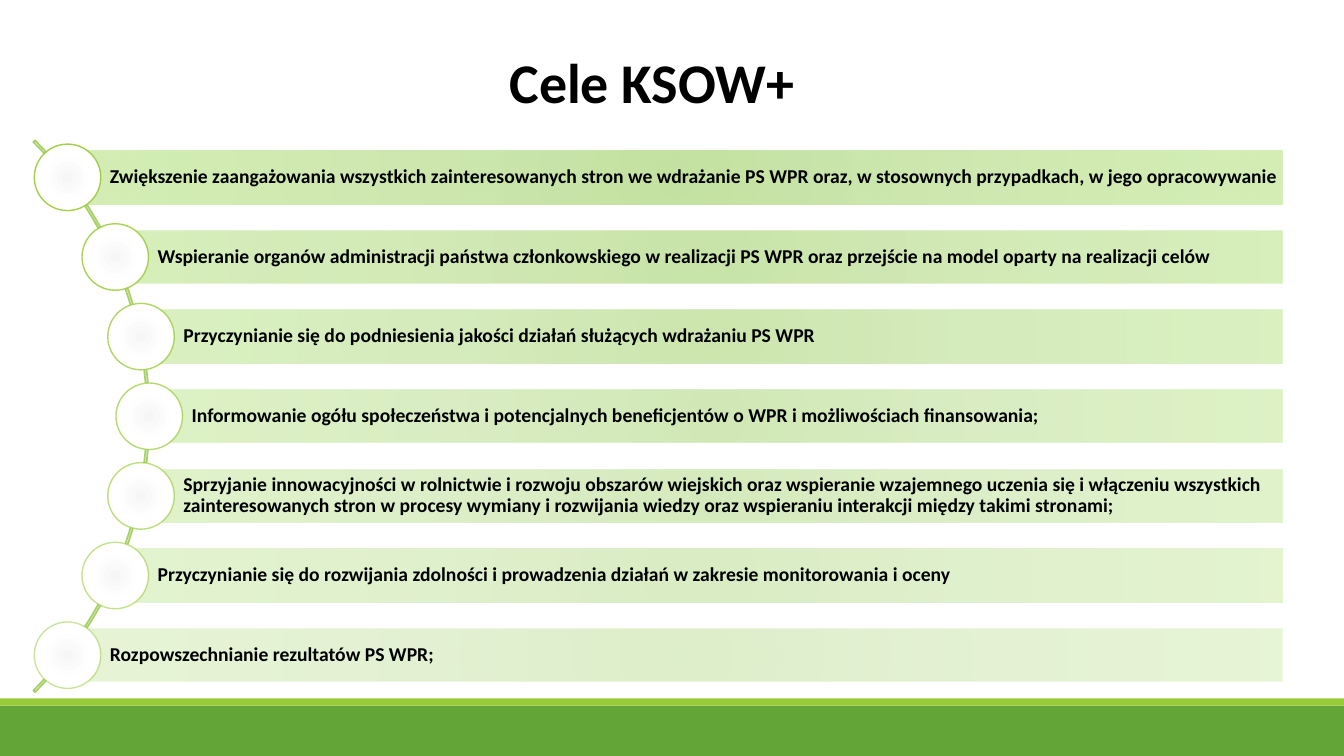
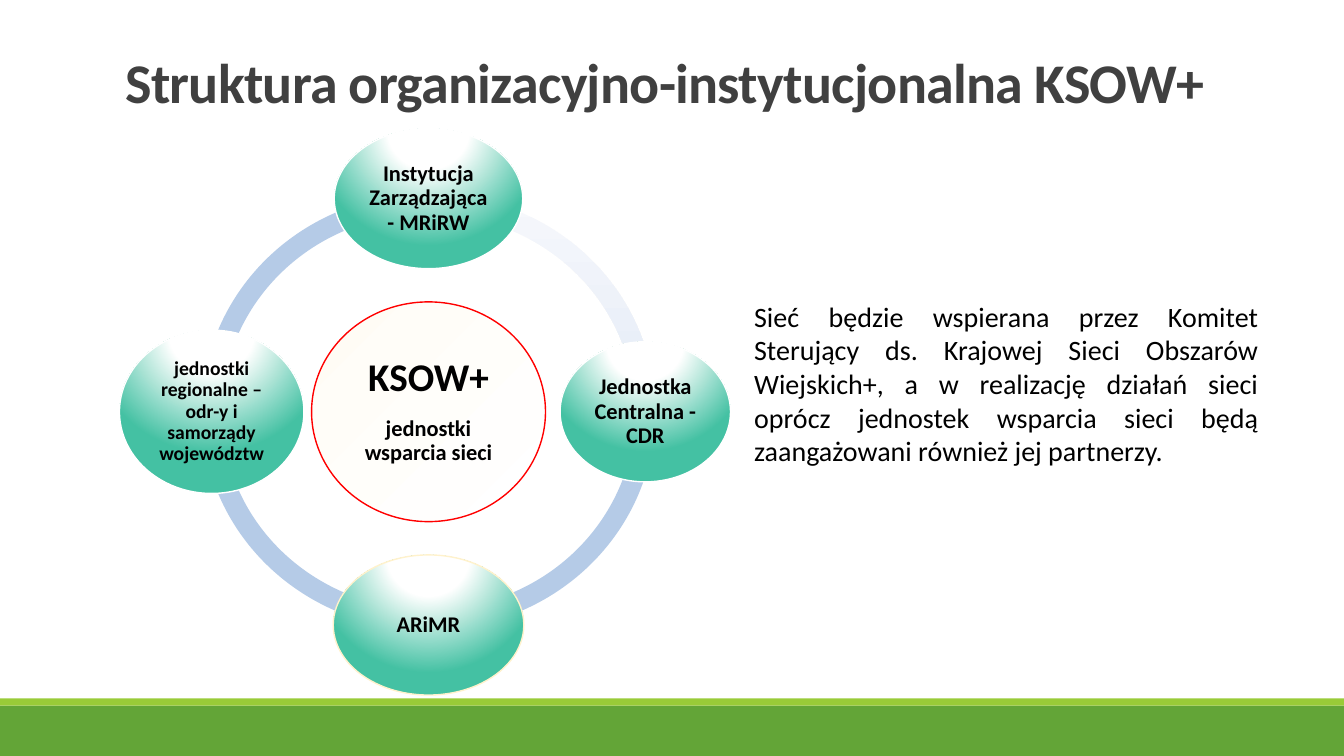
from collections import namedtuple
from dataclasses import dataclass
from math import sqrt

from lxml import etree
from pptx import Presentation
from pptx import util as u
from pptx.dml.color import RGBColor
from pptx.enum import shapes, text
from pptx.oxml.ns import qn

Box = namedtuple("Box", "x y w h")
SHAPE, ALIGN, ANCHOR = shapes.MSO_SHAPE, text.PP_ALIGN, text.MSO_ANCHOR


@dataclass(frozen=True)
class Theme:
    """Colours, type sizes and gradients of the deck."""

    font: str = "Calibri"
    ink: str = "000000"
    grey: str = "404040"
    white: str = "FFFFFF"
    green: str = "63A537"
    lime: str = "99CB38"
    arc: str = "A7D168"
    ring: str = "B5CBE7"
    red: str = "FF0000"
    cream: str = "FFF2CC"
    title: int = 40
    hub: int = 28
    body: int = 20
    node: int = 16
    small: int = 14
    band_fill: tuple = ((0, "BEDF97"), (45, "CAE6A9"), (100, "D0EDAE"))
    dot_fill: tuple = ((0, "F6F6F6"), (45, "FEFEFE"), (100, "FFFFFF"))
    node_fill: tuple = ((0, "FFFFFF"), (35, "FFFFFF"), (100, "44C1A3"))
    hub_fill: tuple = ((0, "FFFCF5"), (100, "FFFFFF"))
    fade_fill: tuple = ((0, "F6F8FC"), (100, "D0DCF0"))


T = Theme()
WIDTH, HEIGHT = 13.33, 7.5

GOALS = (
    "Zwiększenie zaangażowania wszystkich zainteresowanych stron we wdrażanie PS WPR oraz, "
    "w stosownych przypadkach, w jego opracowywanie",
    "Wspieranie organów administracji państwa członkowskiego w realizacji PS WPR oraz "
    "przejście na model oparty na realizacji celów",
    "Przyczynianie się do podniesienia jakości działań służących wdrażaniu PS WPR",
    "Informowanie ogółu społeczeństwa i potencjalnych beneficjentów o WPR "
    "i możliwościach finansowania;",
    "Sprzyjanie innowacyjności w rolnictwie i rozwoju obszarów wiejskich oraz wspieranie "
    "wzajemnego uczenia się i włączeniu wszystkich zainteresowanych stron w procesy wymiany "
    "i rozwijania wiedzy oraz wspieraniu interakcji między takimi stronami;",
    "Przyczynianie się do rozwijania zdolności i prowadzenia działań w zakresie "
    "monitorowania i oceny",
    "Rozpowszechnianie rezultatów PS WPR;",
)

NODES = (
    ("Instytucja Zarządzająca - MRiRW", 0, -1, 1.87, 1.39, T.white, T.node),
    ("Jednostka Centralna - CDR", 1, 0, 1.69, 1.39, T.white, T.node),
    ("ARiMR", 0, 1, 1.89, 1.39, T.cream, T.node),
    ("jednostki regionalne – odr-y i samorządy województw", -1, 0, 1.83, 1.62, T.white, T.small),
)

SUPPORT = (
    "Sieć będzie wspierana przez Komitet Sterujący ds. Krajowej Sieci Obszarów Wiejskich+, "
    "a w realizację działań sieci oprócz jednostek wsparcia sieci będą zaangażowani również "
    "jej partnerzy."
)


def inches(box):
    """Turn a box into lengths that the shape methods accept."""
    return [u.Inches(v) for v in box]


def set_alpha(colour, percent):
    """Make a colour element partly transparent."""
    if percent < 100:
        etree.SubElement(colour, qn("a:alpha"), val=str(round(percent * 1000)))


def set_gradient(sp, stops, focus=None, alpha=100):
    """Fill a shape with a circular gradient, or a downward one without a focus."""
    sp.fill.gradient()
    grad = sp.element.spPr.find(qn("a:gradFill"))
    for child in list(grad):
        grad.remove(child)
    stop_list = etree.SubElement(grad, qn("a:gsLst"))
    for pos, colour in stops:
        stop = etree.SubElement(stop_list, qn("a:gs"), pos=str(pos * 1000))
        set_alpha(etree.SubElement(stop, qn("a:srgbClr"), val=colour), alpha)
    if focus is None:
        etree.SubElement(grad, qn("a:lin"), ang="5400000", scaled="0")
    else:
        path = etree.SubElement(grad, qn("a:path"), path="circle")
        sides = {side: str(v * 1000) for side, v in zip("ltrb", focus)}
        etree.SubElement(path, qn("a:fillToRect"), **sides)


def draw(s, kind, box, fill=None, line=None, weight=1, alpha=100, adjust=()):
    """Add a flat preset shape with an optional solid fill and outline."""
    sp = s.shapes.add_shape(kind, *inches(box))
    sp.shadow.inherit = False
    for i, value in enumerate(adjust):
        sp.adjustments[i] = value
    if fill:
        sp.fill.solid()
        sp.fill.fore_color.rgb = RGBColor.from_string(fill)
    else:
        sp.fill.background()
    if line:
        sp.line.color.rgb = RGBColor.from_string(line)
        sp.line.width = u.Pt(weight)
        set_alpha(sp.element.spPr.find(".//" + qn("a:ln")).find(".//" + qn("a:srgbClr")), alpha)
    else:
        sp.line.fill.background()
    return sp


def write(sp, words, size=T.small, bold=True, color=T.ink, align=ALIGN.CENTER,
          anchor=ANCHOR.MIDDLE, line=0.9, after=0, inset=(0.02,) * 4):
    """Add a formatted paragraph to a shape."""
    tf = sp.text_frame
    tf.word_wrap, tf.vertical_anchor = True, anchor
    tf.margin_left, tf.margin_top, tf.margin_right, tf.margin_bottom = inches(inset)
    p = tf.add_paragraph() if tf.text else tf.paragraphs[0]
    p.alignment, p.line_spacing, p.space_after = align, line, u.Pt(after)
    r = p.add_run()
    r.text = words
    r.font.name, r.font.size, r.font.bold = T.font, u.Pt(size), bold
    r.font.color.rgb = RGBColor.from_string(color)


def footer_bands(prs, s):
    """Draw the two footer bands once and hand them to the slide master."""
    for y, h, colour in ((7, 0.5, T.green), (6.93, 0.07, T.lime)):
        band = draw(s, SHAPE.RECTANGLE, Box(0, y, WIDTH, h), colour)
        prs.slide_master.shapes.element.append(band.element)


def title(s, words, x, color=T.ink, tracking=0):
    """Place the centred slide title."""
    sp = s.shapes.add_textbox(*inches(Box(x, 0.4, 11.71, 0.8)))
    write(sp, words, size=T.title, color=color, line=1)
    if tracking:
        for props in sp.element.iter(qn("a:rPr")):
            props.set("spc", str(round(tracking * 100)))


def goal_list(s, box, goals, radius=3.87, dot=0.66, band=0.53):
    """Lay out goals as bands whose dots follow one arc."""
    pitch = (box.h - dot) / (len(goals) - 1)
    reach = (box.h - dot) / 2
    mid_y = box.y + box.h / 2
    mid_x = box.x + dot / 2 - sqrt(radius ** 2 - reach ** 2)
    draw(s, SHAPE.BLOCK_ARC, Box(mid_x - radius, mid_y - radius, 2 * radius, 2 * radius),
         line=T.arc, weight=1.25, adjust=(189, 27, 0.003))
    for i, goal in enumerate(goals):
        cy = box.y + dot / 2 + i * pitch
        cx = mid_x + sqrt(radius ** 2 - (cy - mid_y) ** 2)
        alpha = 90 - 40 * i / (len(goals) - 1)
        bar = draw(s, SHAPE.RECTANGLE, Box(cx, cy - band / 2, box.x + box.w - cx, band))
        set_gradient(bar, T.band_fill, (100,) * 4, alpha)
        write(bar, goal, align=ALIGN.LEFT, inset=(0.42, 0.04, 0.02, 0.04))
        circle = draw(s, SHAPE.OVAL, Box(cx - dot / 2, cy - dot / 2, dot, dot),
                      line=T.lime, alpha=alpha)
        set_gradient(circle, T.dot_fill, (100,) * 4)


def network(s, box, nodes):
    """Draw a ring with a hub and four nodes on its axes."""
    cx, cy = box.x + box.w / 2, box.y + box.h / 2
    thick = 0.2

    def oval(x, y, w, h, line):
        """Add an oval centred on a point."""
        return draw(s, SHAPE.OVAL, Box(x - w / 2, y - h / 2, w, h), line=line)

    for start, end in ((108, 162), (54, 108), (0, 54), (162, 0)):
        arc = draw(s, SHAPE.BLOCK_ARC, box, T.ring,
                   adjust=(start, end, thick / min(box.w, box.h)))
        if end == 0:
            set_gradient(arc, T.fade_fill)
    hub = oval(cx, cy, 2.32, 2.18, T.red)
    set_gradient(hub, T.hub_fill, (0, 0, 100, 100))
    write(hub, "KSOW+", size=T.hub, after=12)
    write(hub, "jednostki wsparcia sieci", size=T.node, after=7)
    for words, dx, dy, w, h, line, size in nodes:
        node = oval(cx + dx * (box.w - thick) / 2, cy + dy * (box.h - thick / 2) / 2, w, h, line)
        set_gradient(node, T.node_fill, (50, -80, 50, 180))
        write(node, words, size=size)


def goals_slide(s):
    """Build the slide with the list of goals."""
    title(s, "Cele KSOW+", 0.61)
    goal_list(s, Box(0.34, 1.43, 12.38, 5.4), GOALS)


def structure_slide(s):
    """Build the slide with the network and its explanation."""
    sp = s.shapes.add_textbox(*inches(Box(7.48, 2.92, 5, 1.9)))
    write(sp, SUPPORT, size=T.body, bold=False, align=ALIGN.JUSTIFY, anchor=ANCHOR.TOP,
          line=1, inset=(0, 0.05, 0, 0.05))
    title(s, "Struktura organizacyjno-instytucjonalna KSOW+", 0.74, T.grey, -0.5)
    network(s, Box(2, 1.92, 4.5, 4.33), NODES)


def main():
    """Build and save the deck."""
    prs = Presentation()
    prs.slide_width, prs.slide_height = u.Inches(WIDTH), u.Inches(HEIGHT)
    blank = prs.slide_layouts[6]
    for i, build in enumerate((goals_slide, structure_slide)):
        s = prs.slides.add_slide(blank)
        if i == 0:
            footer_bands(prs, s)
        build(s)
    prs.save("out.pptx")


if __name__ == "__main__":
    main()
